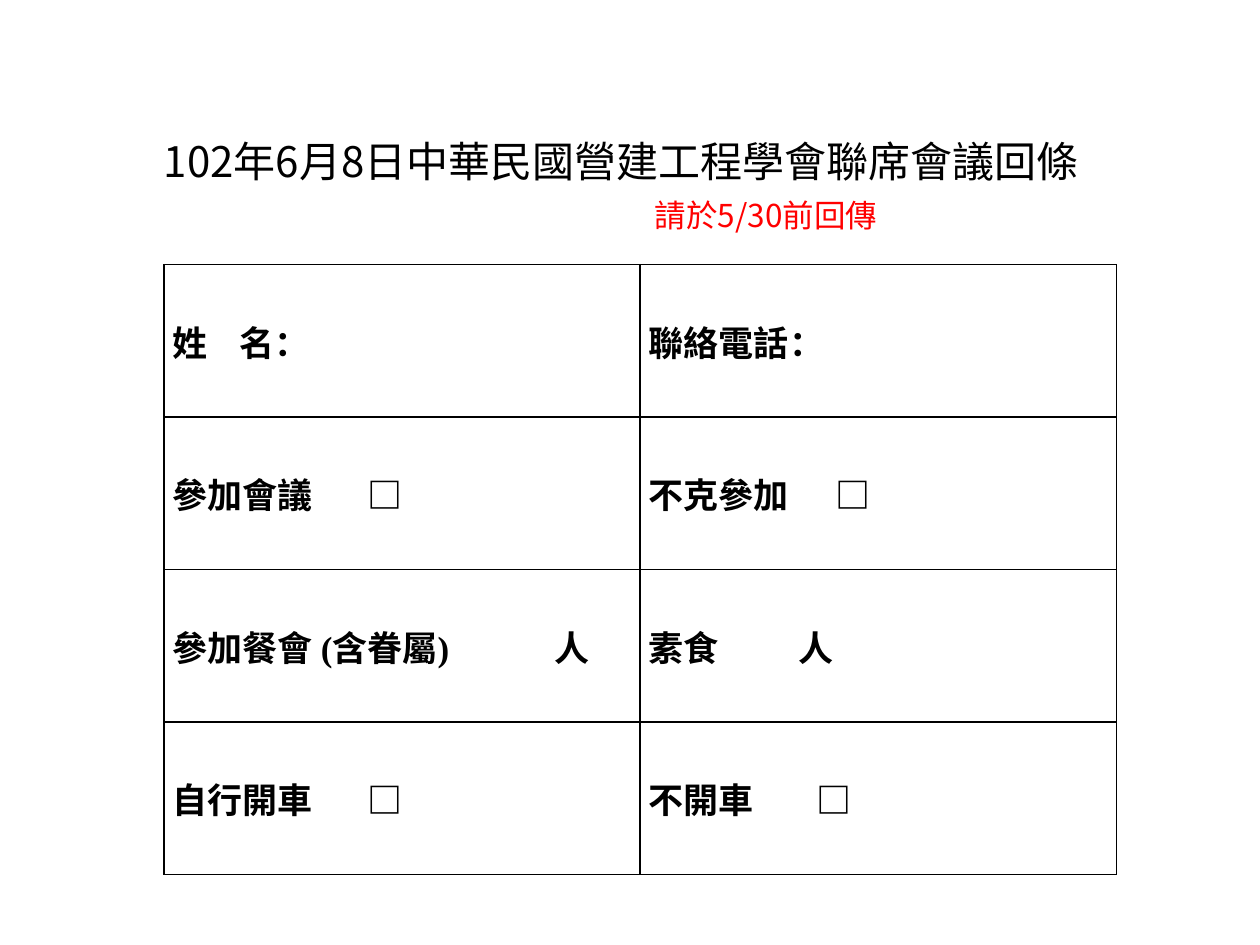
from lxml import etree
from pptx import Presentation
from pptx import util as u
from pptx.dml.color import RGBColor
from pptx.enum import text
from pptx.oxml import ns

COLORS = {"ink": "000000", "notice": "FF0000"}
SANS = "Noto Sans CJK SC"
SERIF = "Times New Roman"


def add_run(paragraph, content, color, latin, **formats):
    run = paragraph.add_run()
    run.text = content
    for name, value in formats.items():
        setattr(run.font, name, value)
    run.font.name = latin
    run.font.color.rgb = RGBColor.from_string(COLORS[color])
    east_asian = etree.SubElement(run.font._element, ns.qn("a:ea"))
    east_asian.set("typeface", SANS)


def add_borders(cell):
    properties = cell._tc.get_or_add_tcPr()
    for side in ("lnL", "lnR", "lnT", "lnB"):
        line = etree.SubElement(properties, ns.qn(f"a:{side}"), w=str(u.Pt(1)))
        fill = etree.SubElement(line, ns.qn("a:solidFill"))
        etree.SubElement(fill, ns.qn("a:srgbClr"), val=COLORS["ink"])


presentation = Presentation()
presentation.slide_width = u.Inches(10)
presentation.slide_height = u.Inches(7.5)
slide = presentation.slides.add_slide(presentation.slide_layouts[6])

heading = slide.shapes.add_textbox(u.Inches(0.43), u.Inches(1.07), u.Inches(9), u.Inches(1))
frame = heading.text_frame
frame.word_wrap = True
title = frame.paragraphs[0]
notice = frame.add_paragraph()
for paragraph in (title, notice):
    paragraph.alignment = text.PP_ALIGN.CENTER
    paragraph.line_spacing = 0.9
notice.space_before = u.Pt(8)
notice._p.get_or_add_pPr().set("marL", str(u.Inches(2.3)))
add_run(title, "102年6月8日中華民國營建工程學會聯席會議回條", "ink", SANS, size=u.Pt(24))
add_run(notice, "請於5/30前回傳", "notice", SANS, size=u.Pt(18))

fields = [
    [("姓\t名：", 0.53), ("聯絡電話：", None)],
    [("參加會議\t□", 1.55), ("不克參加\t□", 1.48)],
    [("參加餐會 (含眷屬)\t人", 3.03), ("素食\t人", 1.19)],
    [("自行開車\t□", 1.55), ("不開車\t□", 1.33)],
]
table = slide.shapes.add_table(
    len(fields), 2, u.Inches(1.3), u.Inches(2.1), u.Inches(7.56), u.Inches(4.84)
).table
for option in ("first_row", "horz_banding"):
    setattr(table, option, False)

cell_format = {
    "margin_left": u.Inches(0.07),
    "margin_right": u.Inches(0.07),
    "margin_top": 0,
    "margin_bottom": 0,
    "vertical_anchor": text.MSO_ANCHOR.MIDDLE,
}
for row, row_fields in enumerate(fields):
    table.rows[row].height = u.Inches(1.21)
    for column, (label, tab_stop) in enumerate(row_fields):
        cell = table.cell(row, column)
        for name, value in cell_format.items():
            setattr(cell, name, value)
        add_borders(cell)
        cell.fill.background()
        paragraph = cell.text_frame.paragraphs[0]
        if tab_stop:
            tabs = etree.SubElement(paragraph._p.get_or_add_pPr(), ns.qn("a:tabLst"))
            etree.SubElement(tabs, ns.qn("a:tab"), pos=str(u.Inches(tab_stop)), algn="l")
        add_run(paragraph, label, "ink", SERIF, size=u.Pt(20), bold=True)

presentation.save("out.pptx")
